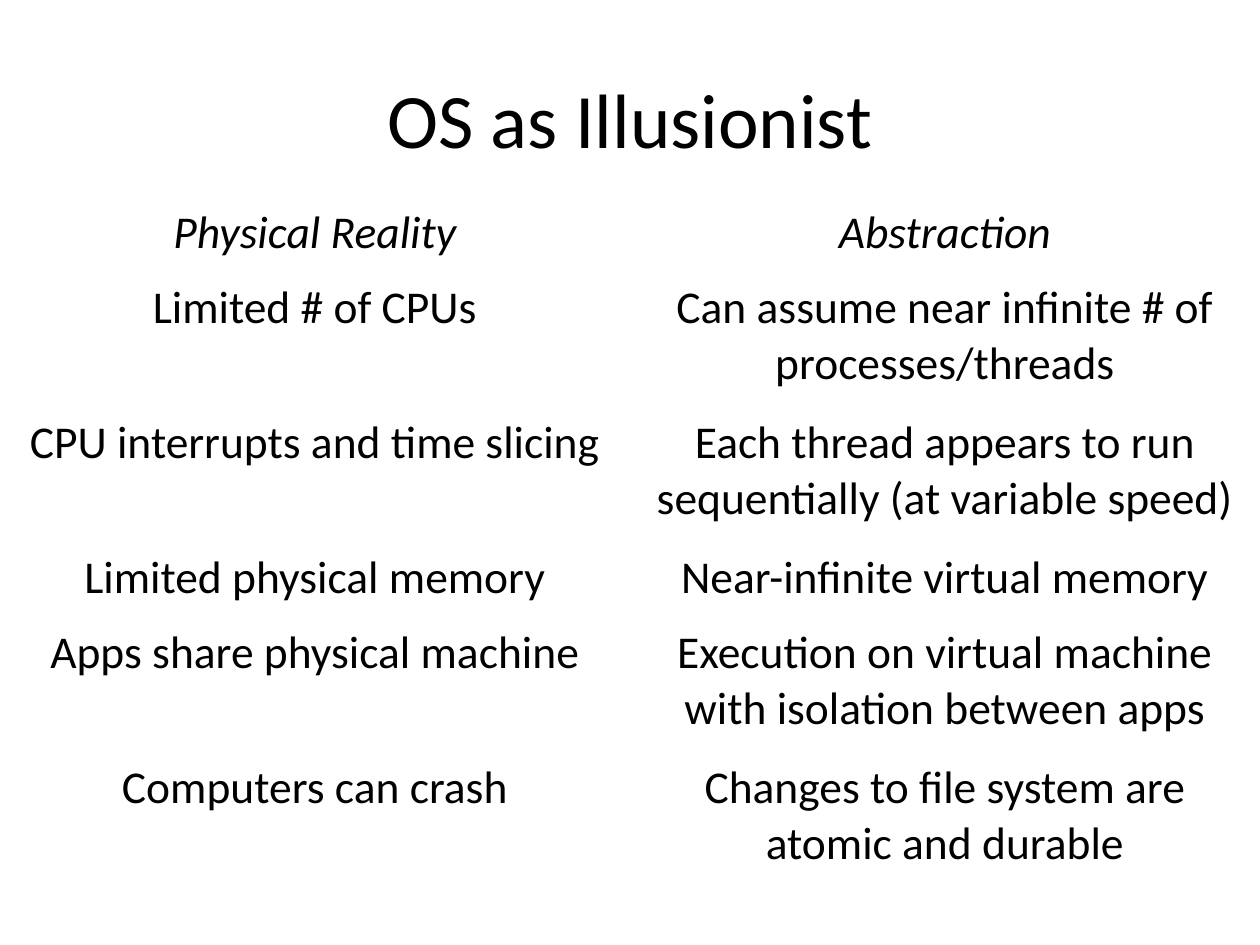
from pptx import Presentation, util as u
from pptx.dml.color import RGBColor
from pptx.enum import text

COLORS = {"ink": "000000"}
FONT = "Calibri"
SLIDE_WIDTH, SLIDE_HEIGHT = u.Inches(10), u.Inches(7.5)
TITLE_BOX = (0.05, 0.04, 0.9, 0.17)
TABLE_BOX = (0, 0.21, 1, 0.73)
SINGLE_ROW, DOUBLE_ROW = u.Inches(0.6), u.Inches(1.07)
ROWS = [
    ("Physical Reality", "Abstraction", SINGLE_ROW),
    ("Limited # of CPUs", "Can assume near infinite # of processes/threads", DOUBLE_ROW),
    ("CPU interrupts and time slicing",
     "Each thread appears to run sequentially (at variable speed)", DOUBLE_ROW),
    ("Limited physical memory", "Near-infinite virtual memory", SINGLE_ROW),
    ("Apps share physical machine",
     "Execution on virtual machine with isolation between apps", DOUBLE_ROW),
    ("Computers can crash", "Changes to file system are atomic and durable", DOUBLE_ROW),
]


def to_slide(box):
    """Turn shares of the slide into left, top, width and height."""
    return [round(share * side) for share, side in zip(box, (SLIDE_WIDTH, SLIDE_HEIGHT) * 2)]


def write(text_frame, wording, size, italic=False):
    """Put one centred paragraph into a text frame."""
    text_frame.text = wording
    text_frame.word_wrap = True
    paragraph = text_frame.paragraphs[0]
    paragraph.alignment = text.PP_ALIGN.CENTER
    font = paragraph.runs[0].font
    font.name, font.size, font.italic = FONT, u.Pt(size), italic
    font.color.rgb = RGBColor.from_string(COLORS["ink"])


def add_title(slide, box, wording):
    """Place the slide title, centred in its box."""
    text_frame = slide.shapes.add_textbox(*to_slide(box)).text_frame
    write(text_frame, wording, 44)
    text_frame.vertical_anchor = text.MSO_ANCHOR.MIDDLE


def add_comparison(slide, box, rows):
    """Place the plain two-column table with an italic heading row."""
    table = slide.shapes.add_table(len(rows), 2, *to_slide(box)).table
    table.first_row = table.horz_banding = False
    for index, (reality, abstraction, height) in enumerate(rows):
        table.rows[index].height = height
        for column, wording in enumerate((reality, abstraction)):
            cell = table.cell(index, column)
            cell.fill.background()
            write(cell.text_frame, wording, 26, italic=index == 0)


def main():
    """Build and save the slide."""
    presentation = Presentation()
    presentation.slide_width, presentation.slide_height = SLIDE_WIDTH, SLIDE_HEIGHT
    slide = presentation.slides.add_slide(presentation.slide_layouts[6])
    add_title(slide, TITLE_BOX, "OS as Illusionist")
    add_comparison(slide, TABLE_BOX, ROWS)
    presentation.save("out.pptx")


if __name__ == "__main__":
    main()
